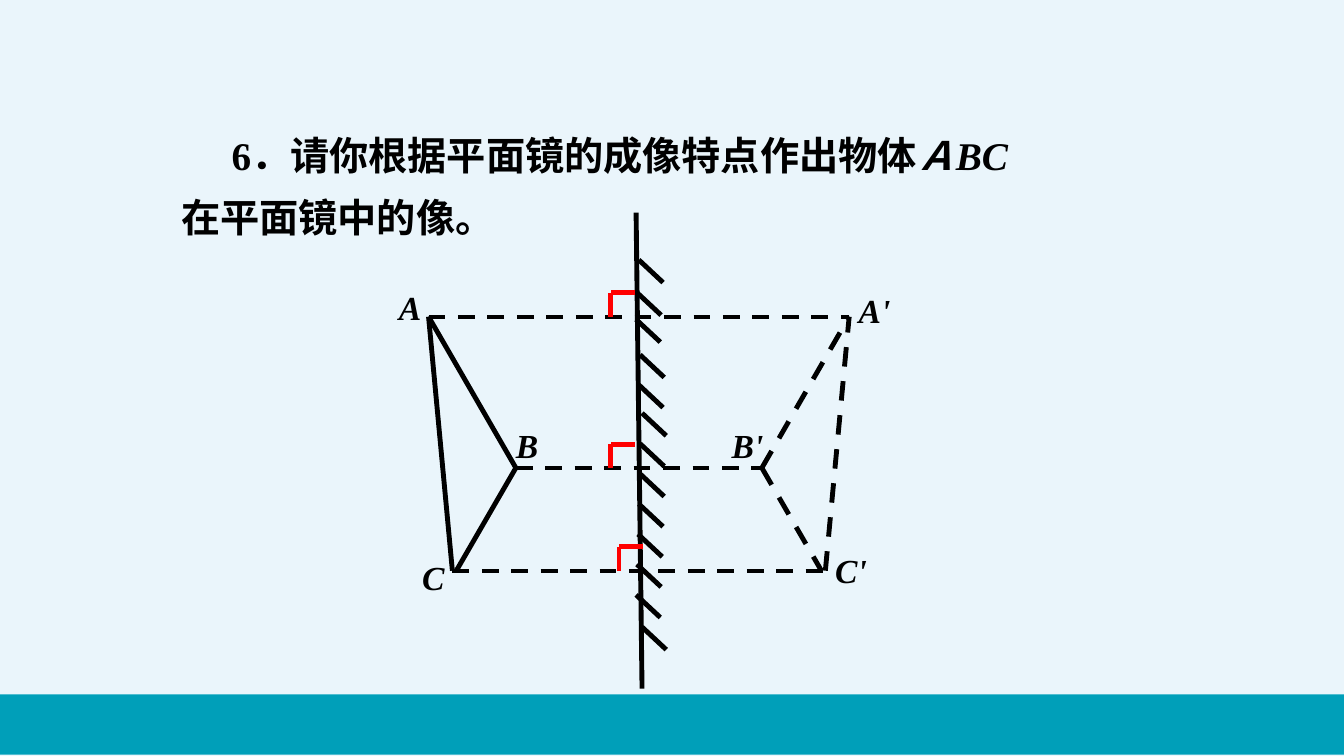
from dataclasses import dataclass

import lxml.etree
import pptx
import pptx.dml.color
import pptx.enum.dml
import pptx.enum.shapes
import pptx.enum.text
import pptx.oxml.ns
import pptx.shapes.shapetree
import pptx.text.text
import pptx.util
from pptx.util import Cm

BLACK = pptx.dml.color.RGBColor(0x00, 0x00, 0x00)
RED = pptx.dml.color.RGBColor(0xFF, 0x00, 0x00)
PALE_BLUE = pptx.dml.color.RGBColor(0xEA, 0xF5, 0xFB)
TEAL = pptx.dml.color.RGBColor(0x00, 0x9F, 0xB9)
FONT_NAME = "Times New Roman"


@dataclass(frozen=True)
class Point:
    """A place on the slide, in centimetres."""
    x: float
    y: float

    def shifted(self, dx: float, dy: float = 0) -> "Point":
        return Point(self.x + dx, self.y + dy)

    def reflected(self) -> "Point":
        return Point(2 * MIRROR_AXIS - self.x, self.y)


@dataclass(frozen=True)
class Stroke:
    color: pptx.dml.color.RGBColor = BLACK
    width: float = 3.5
    dashed: bool = False


@dataclass(frozen=True)
class Label:
    text: str
    corner: Point
    width: float


SOLID = Stroke()
IMAGE_EDGE = Stroke(dashed=True)
CONSTRUCTION = Stroke(width=3, dashed=True)
RIGHT_ANGLE = Stroke(color=RED)

# Object triangle and mirror
MIRROR_AXIS = 16.1
A, B, C = Point(10.8, 7.98), Point(13, 11.79), Point(11.4, 14.38)
OBJECT_EDGES = [(B, A), (B, C.shifted(0.1)), (C, A)]
MIRROR_TOP, MIRROR_BOTTOM = Point(16.03, 5.36), Point(16.18, 17.35)
HATCH_STARTS = [
    Point(16.1, 6.55), Point(16.05, 7.37), Point(16.03, 8.05), Point(16.13, 8.94),
    Point(16.1, 9.7), Point(16.18, 10.41), Point(16.13, 11.18), Point(16.13, 11.94),
    Point(16.1, 12.7), Point(16.08, 13.46), Point(16.05, 14.22), Point(16.03, 14.99),
    Point(16.18, 15.8),
]
ANGLE_SIZE = 0.6
ANGLE_FEET = [Point(15.39, A.y), Point(15.39, B.y), Point(15.6, C.y)]

LABELS = [
    Label("A", Point(9.8, 7.11), 1.2),
    Label("C", Point(10.39, 13.92), 1.2),
    Label("B", Point(12.75, 10.59), 1.2),
    Label("A'", Point(21.39, 7.19), 1.8),
    Label("B'", Point(18.19, 10.59), 2.29),
    Label("C'", Point(20.8, 13.72), 1.98),
]
QUESTION = [
    ("6．请你根据平面镜的成像特点作出物体", False),
    ("ＡBC", True),
    ("在平面镜中的像。", False),
]


def draw_line(shapes, start: Point, end: Point, stroke: Stroke) -> None:
    connector = shapes.add_connector(
        pptx.enum.shapes.MSO_CONNECTOR.STRAIGHT,
        Cm(start.x), Cm(start.y), Cm(end.x), Cm(end.y))
    connector.line.color.rgb = stroke.color
    connector.line.width = pptx.util.Pt(stroke.width)
    if stroke.dashed:
        connector.line.dash_style = pptx.enum.dml.MSO_LINE.DASH
    lxml.etree.SubElement(connector._element.spPr, pptx.oxml.ns.qn("a:effectLst"))


def add_text_paragraph(shapes: pptx.shapes.shapetree.SlideShapes, corner: Point,
                       width: float, height: float) -> pptx.text.text._Paragraph:
    text_box = shapes.add_textbox(Cm(corner.x), Cm(corner.y), Cm(width), Cm(height))
    text_box.text_frame.word_wrap = True
    return text_box.text_frame.paragraphs[0]


def add_run(paragraph: pptx.text.text._Paragraph, text: str,
            size: float, italic: bool) -> None:
    run = paragraph.add_run()
    run.text = text
    font_format = {"name": FONT_NAME, "size": pptx.util.Pt(size),
                   "bold": True, "italic": italic}
    for attribute, value in font_format.items():
        setattr(run.font, attribute, value)
    run.font.color.rgb = BLACK


def draw_background(slide: pptx.slide.Slide) -> None:
    slide.background.fill.solid()
    slide.background.fill.fore_color.rgb = PALE_BLUE
    band = slide.shapes.add_shape(
        pptx.enum.shapes.MSO_SHAPE.RECTANGLE, Cm(-0.08), Cm(17.5), Cm(34.01), Cm(1.52))
    band.shadow.inherit = False
    band.fill.solid()
    band.fill.fore_color.rgb = TEAL
    band.line.fill.background()


def draw_mirror(slide: pptx.slide.Slide) -> None:
    mirror = slide.shapes.add_group_shape()
    draw_line(mirror.shapes, MIRROR_BOTTOM, MIRROR_TOP, SOLID)
    for start in HATCH_STARTS:
        draw_line(mirror.shapes, start, start.shifted(0.61, 0.57), SOLID)


def draw_triangles(slide: pptx.slide.Slide) -> None:
    for start, end in OBJECT_EDGES:
        draw_line(slide.shapes, start, end, SOLID)
        draw_line(slide.shapes, start.reflected(), end.reflected(), IMAGE_EDGE)
    for vertex in (A, B, C):
        draw_line(slide.shapes, vertex, vertex.reflected(), CONSTRUCTION)
    for foot in ANGLE_FEET:
        corner = foot.shifted(0, -ANGLE_SIZE)
        draw_line(slide.shapes, corner.shifted(ANGLE_SIZE), corner, RIGHT_ANGLE)
        draw_line(slide.shapes, corner, foot, RIGHT_ANGLE)


def write_texts(slide: pptx.slide.Slide) -> None:
    for label in LABELS:
        paragraph = add_text_paragraph(slide.shapes, label.corner, label.width, 1.27)
        add_run(paragraph, label.text, 24, True)
    question = add_text_paragraph(slide.shapes, Point(4.32, 2.84), 22.23, 3.2)
    question.line_spacing = 1.3
    question._p.get_or_add_pPr().set("indent", str(Cm(1.27)))
    for text, italic in QUESTION:
        add_run(question, text, 28, italic)


def main() -> None:
    presentation = pptx.Presentation()
    presentation.slide_width, presentation.slide_height = Cm(33.87), Cm(19.05)
    slide = presentation.slides.add_slide(presentation.slide_layouts[6])
    draw_background(slide)
    draw_mirror(slide)
    draw_triangles(slide)
    write_texts(slide)
    presentation.save("out.pptx")


if __name__ == "__main__":
    main()
